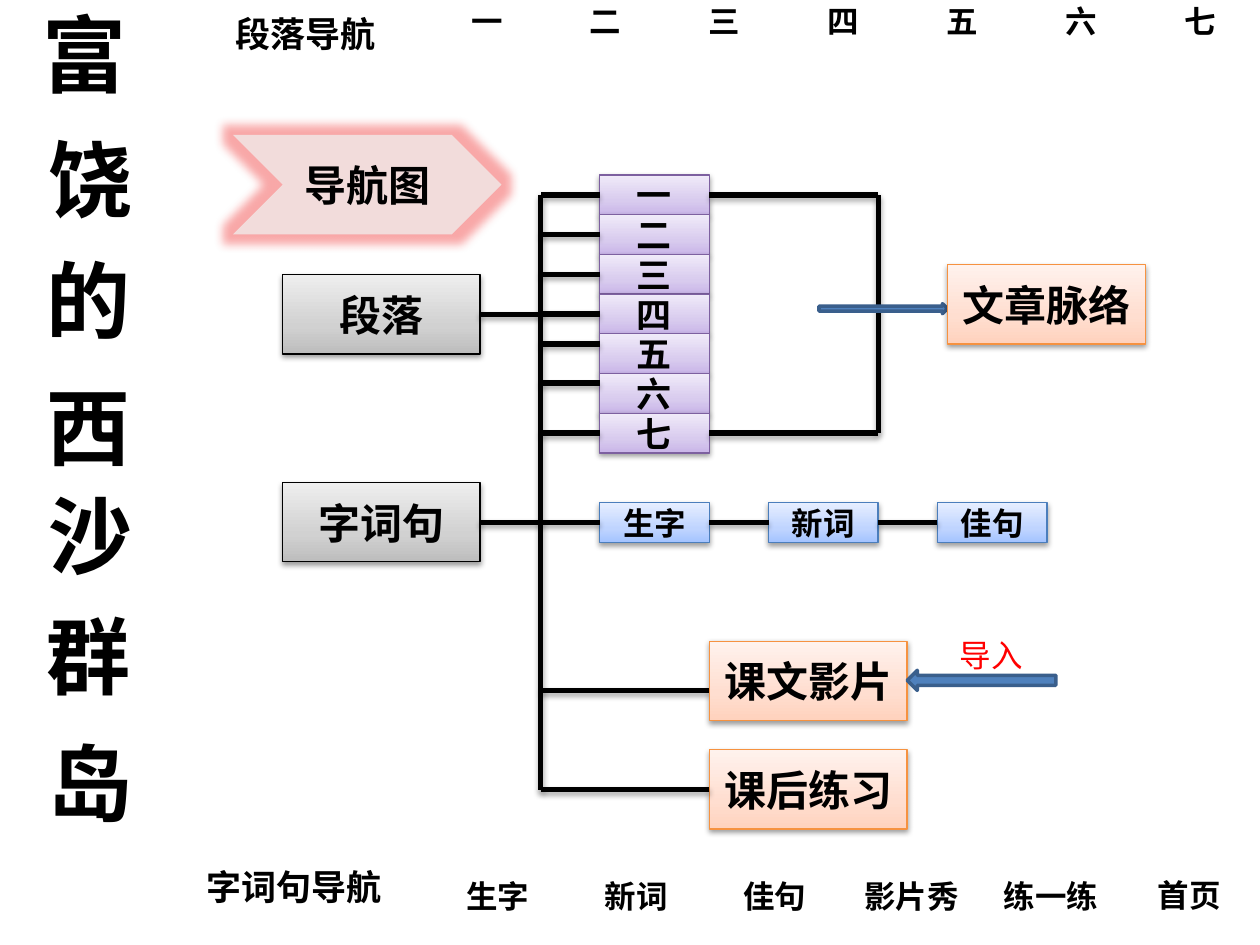
from dataclasses import dataclass
from copy import deepcopy

from lxml import etree
from pptx import Presentation
from pptx.dml.color import RGBColor
from pptx.enum.shapes import MSO_CONNECTOR, MSO_SHAPE
from pptx.enum.text import MSO_ANCHOR, MSO_AUTO_SIZE, PP_ALIGN
from pptx.oxml.ns import qn
from pptx.shapes.autoshape import Shape
from pptx.shapes.connector import Connector
from pptx.slide import Slide
from pptx.util import Inches, Pt

RECTANGLE, CHEVRON = MSO_SHAPE.RECTANGLE, MSO_SHAPE.CHEVRON
RIGHT_ARROW, LEFT_ARROW = MSO_SHAPE.RIGHT_ARROW, MSO_SHAPE.LEFT_ARROW
STRAIGHT = MSO_CONNECTOR.STRAIGHT
MIDDLE, CENTER = MSO_ANCHOR.MIDDLE, PP_ALIGN.CENTER
GROW = MSO_AUTO_SIZE.SHAPE_TO_FIT_TEXT
LEFT_SIDE, RIGHT_SIDE = 1, 3

FONT = "Noto Sans CJK SC"
BLACK = RGBColor(0, 0, 0)
RED = RGBColor(0xFF, 0, 0)
BLUE = RGBColor(0x4F, 0x81, 0xBD)
DARK_BLUE = RGBColor(0x3A, 0x5F, 0x8C)
PINK = RGBColor(0xF2, 0xDC, 0xDB)
GLOW = RGBColor(0xF0, 0x25, 0x25)

TRUNK_X = 4.29
BRACKET_X = 6.97
COLUMN_X = 4.76
ROW_TOP = 1.39
ROW_HEIGHT = (3.28 - ROW_TOP) / 6
NUMERAL_PITCH = (9.30 - 3.64) / 6


@dataclass(frozen=True)
class Look:
    """Gradient colours from bottom to top, outline, text size and box size."""
    bottom: RGBColor
    middle: RGBColor
    top: RGBColor
    outline: RGBColor
    size: int
    width: float
    height: float


@dataclass(frozen=True)
class Label:
    text: str
    left: float
    top: float
    width: float
    height: float
    size: int = 18
    color: RGBColor = BLACK
    bold: bool = True


def color(value: str) -> RGBColor:
    return RGBColor.from_string(value)


TOPIC = Look(color("BDBDBD"), color("D1D1D1"), color("EEEEEE"), BLACK, 24, 1.57, 0.63)
SECTION = Look(color("C9B5E8"), color("D8CBEE"), color("F0EAF9"), color("7D60A0"),
               20, 0.87, ROW_HEIGHT)
WORD = Look(color("A4C4FF"), color("BFD4FF"), color("E6EEFF"), color("4B7EBC"),
            18, 0.87, ROW_HEIGHT)
EXTRA = Look(color("FFD2BD"), color("FFDED0"), color("FFF2ED"), color("F69240"),
             24, 1.57, 0.63)

NUMERALS = "一二三四五六七"
TITLE = [("富", 0.24, -0.03), ("饶", 0.29, 0.96), ("的", 0.27, 1.92), ("西", 0.27, 2.93),
         ("沙", 0.29, 3.79), ("群", 0.27, 4.75), ("岛", 0.29, 5.76)]
LABELS = [
    *(Label(numeral, 3.64 + i * NUMERAL_PITCH, -0.03, 0.46, 0.4)
      for i, numeral in enumerate(NUMERALS)),
    *(Label(character, left, top, 0.88, 0.91, 48) for character, left, top in TITLE),
    *(Label(word, 3.6 + 1.1 * i, 6.91, 0.71, 0.4)
      for i, word in enumerate(("生字", "新词", "佳句"))),
    Label("影片秀", 6.76, 6.91, 0.96, 0.4),
    Label("练一练", 7.87, 6.91, 0.96, 0.4),
    Label("首页", 9.09, 6.9, 0.71, 0.4),
    Label("段落导航", 1.77, 0.05, 1.33, 0.44, 20),
    Label("字词句导航", 1.54, 6.82, 1.61, 0.44, 20),
    Label("导入", 7.52, 5, 0.71, 0.4, color=RED, bold=False),
]


def write(box: Shape, text: str, size: int, ink: RGBColor = BLACK, bold: bool = True):
    para = box.text_frame.paragraphs[0]
    para.text = text
    font = para.font
    font.size, font.bold, font.name = Pt(size), bold, FONT
    font.color.rgb = ink
    defaults = para._p.pPr.find(qn("a:defRPr"))
    etree.SubElement(defaults, qn("a:ea"), typeface=FONT)
    return para


def add_effect(shape: Shape | Connector, kind: str, ink: RGBColor, alpha: int,
               **attributes: str) -> None:
    properties = shape._element.spPr
    effects = properties.find(qn("a:effectLst"))
    if effects is None:
        effects = etree.SubElement(properties, qn("a:effectLst"))
    effect = etree.SubElement(effects, qn(f"a:{kind}"), **attributes)
    tint = etree.SubElement(effect, qn("a:srgbClr"), val=str(ink))
    etree.SubElement(tint, qn("a:alpha"), val=str(alpha * 1000))


def add_shadow(shape: Shape | Connector, alpha: int, distance: int) -> None:
    add_effect(shape, "outerShdw", BLACK, alpha, blurRad="40000", dist=str(distance),
               dir="5400000", rotWithShape="0")


def add_label(page: Slide, label: Label) -> None:
    box = page.shapes.add_textbox(Inches(label.left), Inches(label.top),
                                  Inches(label.width), Inches(label.height))
    box.text_frame.word_wrap = False
    box.text_frame.auto_size = GROW
    write(box, label.text, label.size, label.color, label.bold)


def add_preset(page: Slide, kind: MSO_SHAPE, left: float, top: float,
               width: float, height: float) -> Shape:
    shape = page.shapes.add_shape(kind, Inches(left), Inches(top),
                                  Inches(width), Inches(height))
    shape.shadow.inherit = False
    return shape


def center_text(shape: Shape, text: str, size: int) -> None:
    shape.text_frame.vertical_anchor = MIDDLE
    write(shape, text, size).alignment = CENTER


def add_box(page: Slide, text: str, left: float, top: float, look: Look) -> Shape:
    box = add_preset(page, RECTANGLE, left, top, look.width, look.height)
    box.fill.gradient()
    box.fill.gradient_angle = 90
    first = box._element.spPr.find(".//" + qn("a:gs"))
    first.addnext(deepcopy(first))
    shades = (look.bottom, look.middle, look.top)
    for stop, place, shade in zip(box.fill.gradient_stops, (0, 0.35, 1), shades):
        stop.position = place
        stop.color.rgb = shade
    box.line.color.rgb = look.outline
    box.line.width = Pt(0.75)
    add_shadow(box, 38, 20000)
    center_text(box, text, look.size)
    return box


def add_arrow(page: Slide, kind: MSO_SHAPE, left: float, top: float,
              width: float, height: float) -> None:
    arrow = add_preset(page, kind, left, top, width, height)
    arrow.fill.solid()
    arrow.fill.fore_color.rgb = BLUE
    arrow.line.color.rgb = DARK_BLUE
    arrow.line.width = Pt(2)


def add_line(page: Slide, x1: int, y1: int, x2: int, y2: int) -> Connector:
    line = page.shapes.add_connector(STRAIGHT, x1, y1, x2, y2)
    line.line.color.rgb = BLACK
    line.line.width = Pt(3)
    add_shadow(line, 35, 23000)
    return line


def add_stub(page: Slide, box: Shape, side: int, x: float) -> None:
    """Draw a level line from the middle of a box's side to x."""
    edge = box.left if side == LEFT_SIDE else box.left + box.width
    y = box.top + box.height // 2
    add_line(page, edge, y, Inches(x), y).begin_connect(box, side)


def add_branch(page: Slide, y: float, x: float) -> None:
    add_line(page, Inches(TRUNK_X), Inches(y), Inches(x), Inches(y))


def main() -> None:
    deck = Presentation()
    deck.slide_width, deck.slide_height = Inches(10), Inches(7.5)
    page = deck.slides.add_slide(deck.slide_layouts[6])
    for label in LABELS:
        add_label(page, label)

    topics = [add_box(page, "段落", 2.24, 2.18, TOPIC),
              add_box(page, "字词句", 2.24, 3.83, TOPIC)]
    sections = [add_box(page, numeral, COLUMN_X, ROW_TOP + i * ROW_HEIGHT, SECTION)
                for i, numeral in enumerate(NUMERALS)]
    words = [add_box(page, word, COLUMN_X + 1.34 * i, 3.99, WORD)
             for i, word in enumerate(("生字", "新词", "佳句"))]
    practice = add_box(page, "课后练习", 5.63, 5.95, EXTRA)

    for x, bottom in ((TRUNK_X, 6.27), (BRACKET_X, 3.44)):
        add_line(page, Inches(x), Inches(bottom), Inches(x), Inches(1.55))
    for topic in topics:
        add_stub(page, topic, RIGHT_SIDE, TRUNK_X)
    for box in (*sections[:4], sections[6], words[0], practice):
        add_stub(page, box, LEFT_SIDE, TRUNK_X)
    for y, x in ((2.73, COLUMN_X), (3.04, COLUMN_X), (5.48, 5.63)):
        add_branch(page, y, x)
    for section in (sections[0], sections[6]):
        add_stub(page, section, RIGHT_SIDE, BRACKET_X)
    for before, after in zip(words, words[1:]):
        y = before.top + before.height // 2
        line = add_line(page, before.left + before.width, y, after.left, y)
        line.begin_connect(before, RIGHT_SIDE)
        line.end_connect(after, LEFT_SIDE)

    add_arrow(page, RIGHT_ARROW, 6.5, 2.41, 1.02, 0.08)
    add_box(page, "文章脉络", 7.52, 2.1, EXTRA)
    add_box(page, "课文影片", 5.63, 5.09, EXTRA)
    add_arrow(page, LEFT_ARROW, 7.2, 5.32, 1.18, 0.16)

    heading = add_preset(page, CHEVRON, 1.85, 1.07, 2.13, 0.79)
    heading.fill.solid()
    heading.fill.fore_color.rgb = PINK
    heading.line.fill.background()
    add_effect(heading, "glow", GLOW, 40, rad="139700")
    center_text(heading, "导航图", 24)
    deck.save("out.pptx")


if __name__ == "__main__":
    main()
